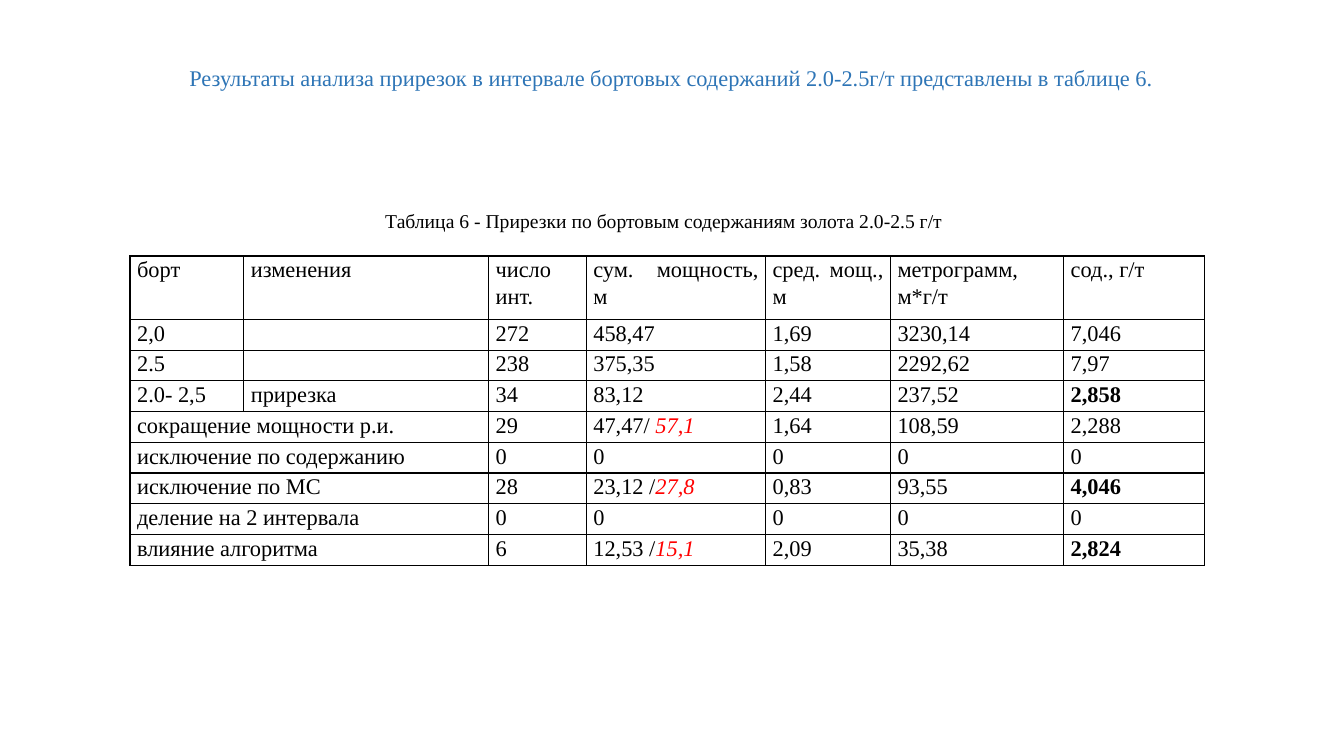
from dataclasses import dataclass

from lxml.etree import SubElement
from pptx import Presentation
from pptx.dml.color import RGBColor as Rgb
from pptx.enum.text import MSO_AUTO_SIZE as AutoSize, PP_ALIGN as Align
from pptx.oxml.ns import qn
from pptx.util import Inches, Pt


@dataclass(frozen=True)
class Theme:
    """Colours, type sizes and spacing of the slide."""
    font: str = "Times New Roman"
    ink: str = "000000"
    heading: str = "2E75B6"
    accent: str = "FF0000"
    body_size: int = 16
    caption_size: int = 14
    text_spacing: float = 1.5
    cell_spacing: float = 1.07
    first_line: int = Inches(0.49)
    cell_inset: int = Inches(0.07)
    border: int = Pt(1)


THEME = Theme()
SLIDE_WIDTH, SLIDE_HEIGHT = Inches(13.33), Inches(7.5)
COLUMN_SHARES = [1.13, 2.43, 0.97, 1.78, 1.24, 1.72, 1.4]
HEADER_SHARE = 0.205

HEADER = ["борт", "изменения", "число инт. ", "сум. мощность, м ",
          "сред. мощ., м", "метрограмм, м*г/т", "сод., г/т"]
CUTOFFS = [
    ["2,0", "", "272", "458,47", "1,69", "3230,14", "7,046"],
    ["2.5", "", "238", "375,35", "1,58", "2292,62", "7,97"],
    ["2.0- 2,5", "прирезка", "34", "83,12", "2,44", "237,52", "2,858"],
]
CAUSES = [
    ["сокращение мощности р.и.", None, "29", ("47,47/ ", "57,1"), "1,64", "108,59", "2,288"],
    ["исключение по содержанию", None, "0", "0", "0", "0", "0"],
    ["исключение по МС", None, "28", ("23,12 /", "27,8"), "0,83", "93,55", "4,046"],
    ["деление на 2 интервала", None, "0", "0", "0", "0", "0"],
    ["влияние алгоритма", None, "6", ("12,53 /", "15,1"), "2,09", "35,38", "2,824"],
]
BOLD_GRADES = {"2,858", "4,046", "2,824"}


def percent_box(left, top, width, height):
    """Turn percentages of the slide into a box."""
    return (int(SLIDE_WIDTH * left / 100), int(SLIDE_HEIGHT * top / 100),
            int(SLIDE_WIDTH * width / 100), int(SLIDE_HEIGHT * height / 100))


def style_paragraph(paragraph, size, color, align, spacing):
    """Set the font and spacing of a whole paragraph."""
    paragraph.alignment, paragraph.line_spacing = align, spacing
    font = paragraph.font
    font.name, font.size = THEME.font, Pt(size)
    font.color.rgb = Rgb.from_string(color)


def add_line_of_text(slide, box, wording, size, color, align):
    """Place one indented paragraph in the box."""
    frame = slide.shapes.add_textbox(*box).text_frame
    frame.word_wrap, frame.auto_size = True, AutoSize.SHAPE_TO_FIT_TEXT
    paragraph = frame.paragraphs[0]
    paragraph.add_run().text = wording
    style_paragraph(paragraph, size, color, align, THEME.text_spacing)
    paragraph._p.get_or_add_pPr().set("indent", str(THEME.first_line))


def outline_cell(cell):
    """Draw the four borders of a cell and leave it unfilled."""
    properties = cell._tc.get_or_add_tcPr()
    for side in ("a:lnL", "a:lnR", "a:lnT", "a:lnB"):
        line = SubElement(properties, qn(side), w=str(THEME.border))
        SubElement(SubElement(line, qn("a:solidFill")), qn("a:srgbClr"), val=THEME.ink)
    cell.fill.background()


def fill_cell(cell, content):
    """Write a value, with an optional red second value, into a cell."""
    cell.margin_left = cell.margin_right = THEME.cell_inset
    cell.margin_top = cell.margin_bottom = 0
    value, adjusted = content if isinstance(content, tuple) else (content, None)
    paragraph = cell.text_frame.paragraphs[0]
    style_paragraph(paragraph, THEME.body_size, THEME.ink, Align.JUSTIFY, THEME.cell_spacing)
    if value:
        paragraph.add_run().text = value
    if value in BOLD_GRADES:
        paragraph.font.bold = True
    if adjusted:
        red_value = paragraph.add_run()
        red_value.text = adjusted
        red_value.font.italic = True
        red_value.font.color.rgb = Rgb.from_string(THEME.accent)


def add_results_table(slide, box, rows):
    """Place the results in the box, joining the first two cells of each cause."""
    width, height = box[2:]
    table = slide.shapes.add_table(len(rows), len(COLUMN_SHARES), *box).table
    table.first_row = table.horz_banding = False
    for column, share in zip(table.columns, COLUMN_SHARES):
        column.width = int(width * share / sum(COLUMN_SHARES))
    header_height = int(height * HEADER_SHARE)
    for row in table.rows:
        row.height = (height - header_height) // (len(rows) - 1)
    table.rows[0].height = header_height
    for row_number, contents in enumerate(rows):
        for column_number, content in enumerate(contents):
            cell = table.cell(row_number, column_number)
            outline_cell(cell)
            if content is None:
                table.cell(row_number, column_number - 1).merge(cell)
            else:
                fill_cell(cell, content)


def main():
    """Build and save the slide."""
    deck = Presentation()
    deck.slide_width, deck.slide_height = SLIDE_WIDTH, SLIDE_HEIGHT
    slide = deck.slides.add_slide(deck.slide_layouts[6])
    add_line_of_text(slide, percent_box(9.68, 6, 79.97, 6.13),
                     "Результаты анализа прирезок в интервале бортовых содержаний "
                     "2.0-2.5г/т представлены в таблице 6.",
                     THEME.body_size, THEME.heading, Align.JUSTIFY)
    add_line_of_text(slide, percent_box(12.45, 25.47, 70.22, 5.6),
                     "Таблица 6 - Прирезки по бортовым содержаниям золота 2.0-2.5 г/т",
                     THEME.caption_size, THEME.ink, Align.CENTER)
    add_results_table(slide, percent_box(9.68, 33.87, 79.97, 40.93),
                      [HEADER, *CUTOFFS, *CAUSES])
    deck.save("out.pptx")


if __name__ == "__main__":
    main()
